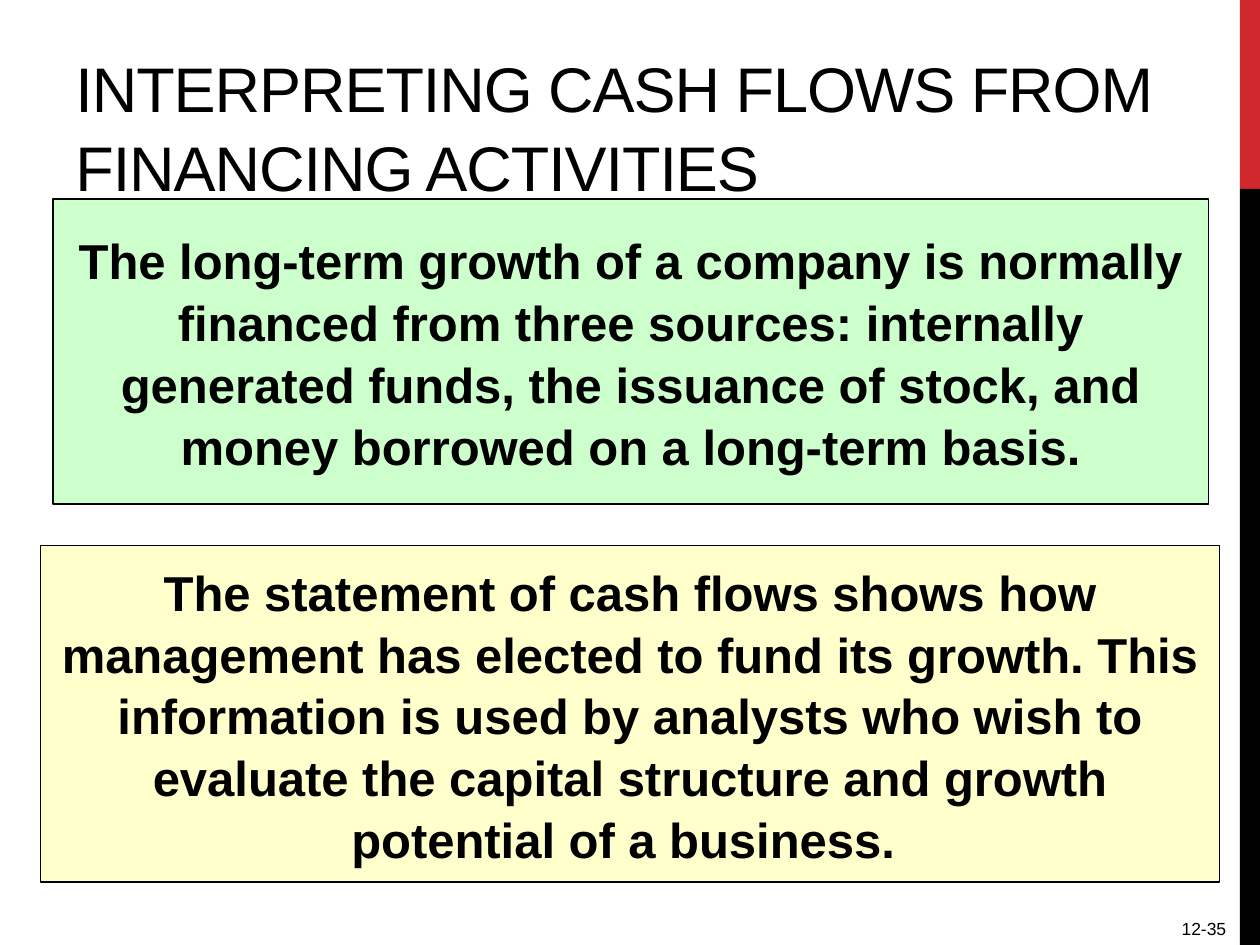
from dataclasses import dataclass

from pptx import Presentation
from pptx.dml.color import RGBColor as RGB
from pptx.enum.shapes import MSO_SHAPE as Shape
from pptx.enum.text import MSO_ANCHOR as Anchor, PP_ALIGN as Align
from pptx.util import Inches, Pt

WIDE, HIGH = 10, 7.5


@dataclass(frozen=True)
class Theme:
    face: str = "Arial"
    ink: str = "000000"
    red: str = "D1282E"
    green: str = "CCFFCC"
    cream: str = "FFFFCC"
    title: float = 36
    body: float = 28
    small: float = 10
    edge: float = 0.75
    lead: float = 1.05
    track: float = -0.6


THEME = Theme()


def put(item, values):
    for name, value in values.items():
        setattr(item, name, value)


def write(shape, text, size, align, anchor, bold=False):
    frame = shape.text_frame
    put(frame, {"word_wrap": True, "vertical_anchor": anchor})
    para = frame.paragraphs[0]
    put(para, {"alignment": align, "line_spacing": THEME.lead})
    run = para.add_run()
    run.text = text
    put(run.font, {"name": THEME.face, "size": Pt(size), "bold": bold})
    run.font.color.rgb = RGB.from_string(THEME.ink)
    return run


def block(slide, box, fill):
    shape = slide.shapes.add_shape(Shape.RECTANGLE, *map(Inches, box))
    shape.shadow.inherit = False
    shape.fill.solid()
    shape.fill.fore_color.rgb = RGB.from_string(fill)
    shape.line.fill.background()
    return shape


def stripe(slide, box):
    """Fill the box with a red top fifth above a black rest."""
    left, top, width, height = box
    cut = height / 5
    block(slide, (left, top, width, cut), THEME.red)
    block(slide, (left, top + cut, width, height - cut), THEME.ink)


def panel(slide, box, fill, text):
    shape = block(slide, box, fill)
    shape.line.color.rgb = RGB.from_string(THEME.ink)
    shape.line.width = Pt(THEME.edge)
    write(shape, text, THEME.body, Align.CENTER, Anchor.MIDDLE, True)


def label(slide, box, text, size, align):
    shape = slide.shapes.add_textbox(*map(Inches, box))
    return write(shape, text, size, align, Anchor.BOTTOM)


def heading(slide, box, text):
    run = label(slide, box, text, THEME.title, Align.LEFT)
    run.font._element.set("spc", str(round(THEME.track * 100)))


def main():
    deck = Presentation()
    put(deck, {"slide_width": Inches(WIDE), "slide_height": Inches(HIGH)})
    slide = deck.slides.add_slide(deck.slide_layouts[6])

    stripe(slide, (9.84, 0, 0.16, HIGH))
    panel(slide, (0.42, 1.58, 9.17, 2.42), THEME.green,
          "The long-term growth of a company is normally financed from "
          "three sources: internally generated funds, the issuance of "
          "stock, and money borrowed on a long-term basis.")
    panel(slide, (0.32, 4.33, 9.36, 2.67), THEME.cream,
          "The statement of cash flows shows how management has elected "
          "to fund its growth. This information is used by analysts who "
          "wish to evaluate the capital structure and growth potential "
          "of a business. ")
    label(slide, (8, 7.19, 1.83, 0.31), "12-35", THEME.small, Align.RIGHT)
    heading(slide, (0.5, 0.17, 9.17, 1.5),
            "INTERPRETING CASH FLOWS FROM FINANCING ACTIVITIES")
    deck.save("out.pptx")


if __name__ == "__main__":
    main()
